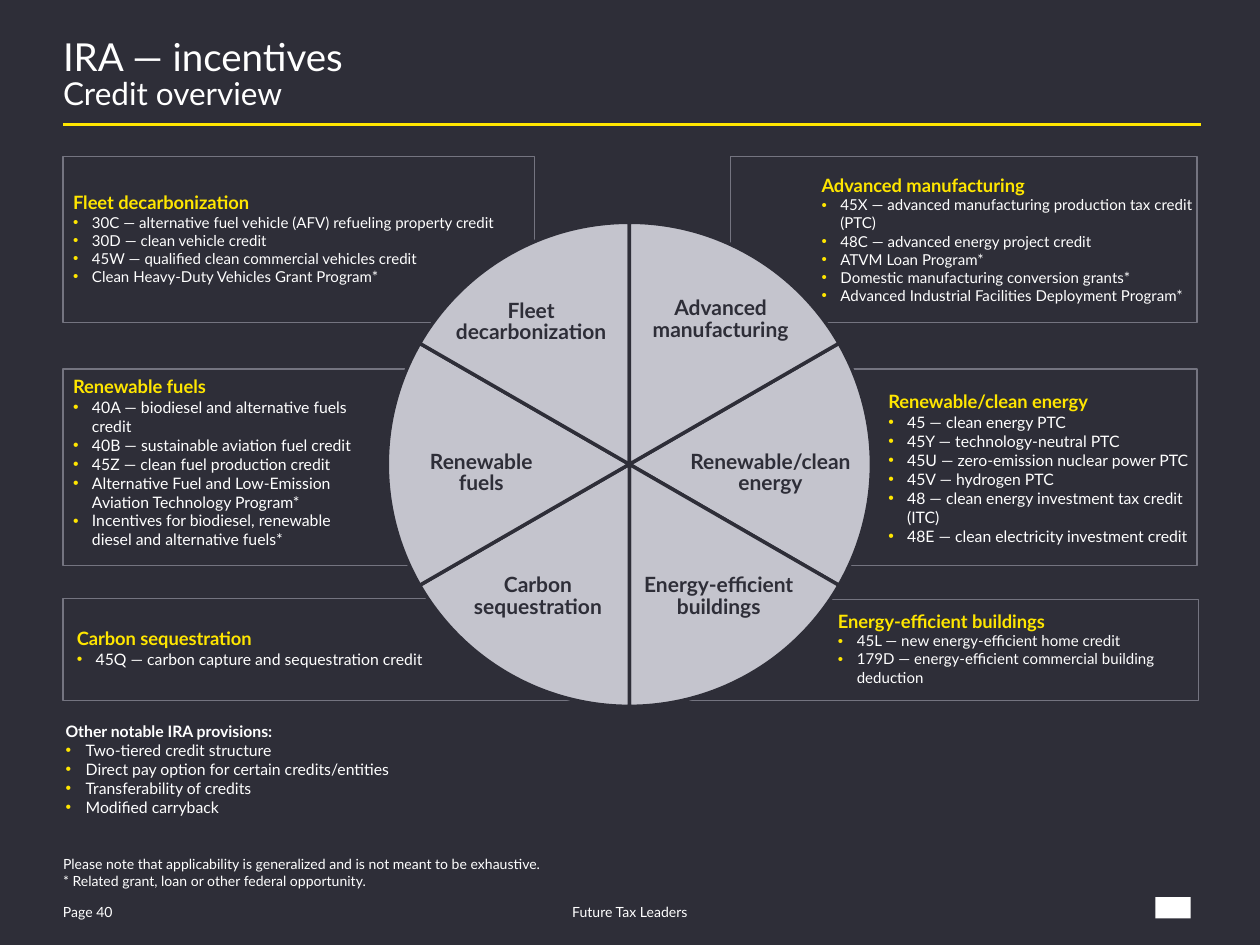
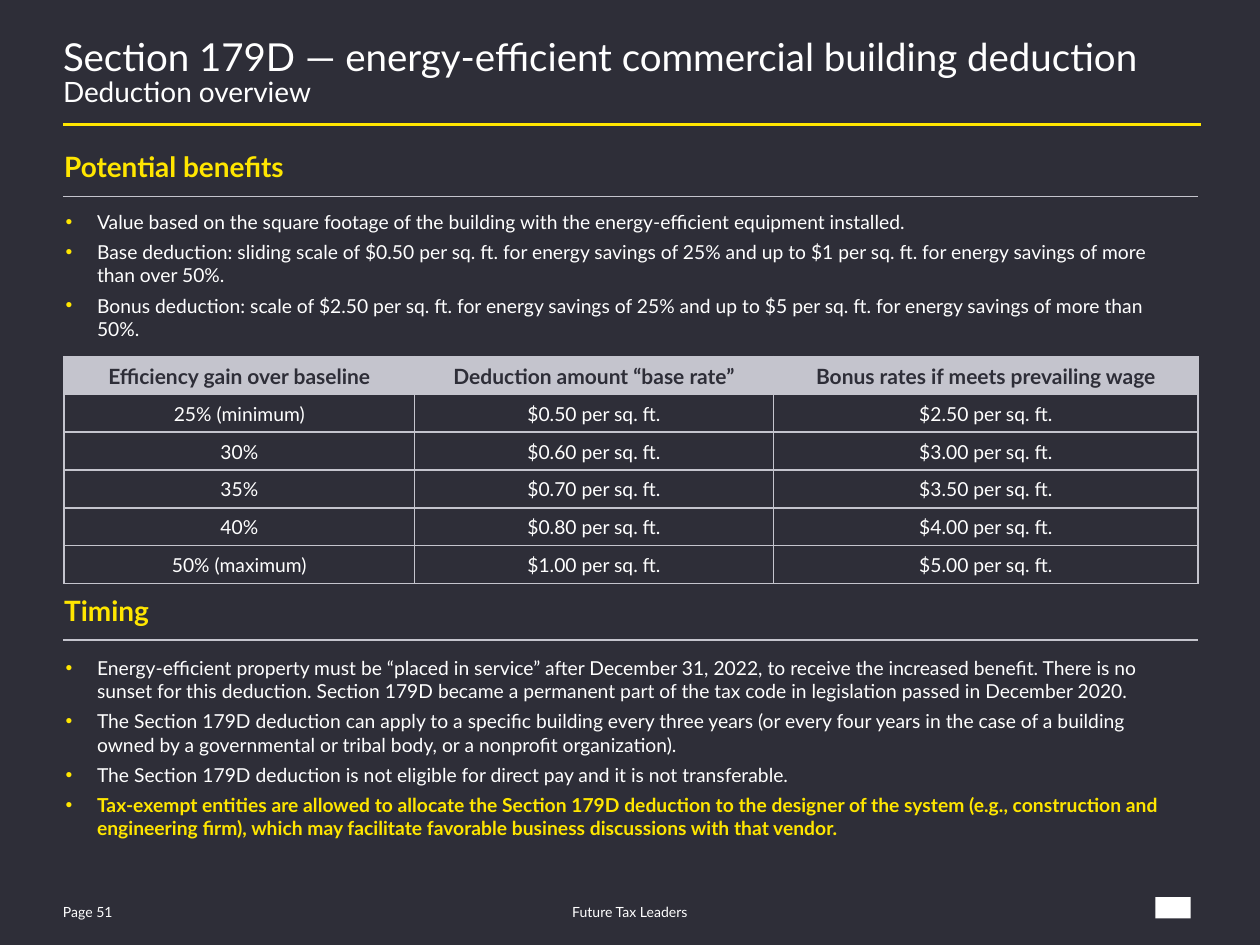
"""Build two tax-incentive slides: a credit wheel and a deduction overview."""
import pptx
import pptx.chart.data
import pptx.dml.color
import pptx.enum.chart
import pptx.enum.shapes
import pptx.enum.text
import pptx.oxml
import pptx.oxml.ns
import pptx.util

Inches, Pt = pptx.util.Inches, pptx.util.Pt
RGBColor = pptx.dml.color.RGBColor
ALIGN = pptx.enum.text.PP_ALIGN
ANCHOR = pptx.enum.text.MSO_ANCHOR
SHAPE = pptx.enum.shapes.MSO_SHAPE
qn = pptx.oxml.ns.qn

DARK = RGBColor(0x2E, 0x2E, 0x38)
YELLOW = RGBColor(0xFF, 0xE6, 0x00)
WHITE = RGBColor(0xFF, 0xFF, 0xFF)
SILVER = RGBColor(0xC4, 0xC4, 0xCD)
GREY = RGBColor(0x74, 0x74, 0x80)
FONT = "Lato"

CARDS = [
    ((0.5, 4.75, 4.08, 0.81), (0.61, 4.98, 2.83, 0.33), "Carbon sequestration", 9,
     ["45Q — carbon capture and sequestration credit"]),
    ((0.5, 1.24, 3.74, 1.32), (0.58, 1.52, 3.52, 0.76), "Fleet decarbonization", 8.6,
     ["30C — alternative fuel vehicle (AFV) refueling property credit",
      "30D — clean vehicle credit",
      "45W — qualified clean commercial vehicles credit",
      "Clean Heavy-Duty Vehicles Grant Program*"]),
    ((5.47, 4.76, 4.04, 0.8), (6.65, 4.84, 2.85, 0.61), "Energy-efficient buildings", 8.6,
     ["45L — new energy-efficient home credit",
      "179D — energy-efficient commercial building deduction"]),
    ((5.8, 1.24, 3.7, 1.32), (6.52, 1.38, 2.99, 1.05), "Advanced manufacturing", 8.6,
     ["45X — advanced manufacturing production tax credit (PTC)",
      "48C — advanced energy project credit",
      "ATVM Loan Program*",
      "Domestic manufacturing conversion grants*",
      "Advanced Industrial Facilities Deployment Program*"]),
    ((0.5, 2.93, 2.85, 1.56), (0.58, 2.98, 2.29, 1.39), "Renewable fuels", 9,
     ["40A — biodiesel and alternative fuels credit",
      "40B — sustainable aviation fuel credit",
      "45Z — clean fuel production credit",
      "Alternative Fuel and Low-Emission Aviation Technology Program*",
      "Incentives for biodiesel, renewable diesel and alternative fuels*"]),
    ((5.34, 2.93, 4.16, 1.56), (7.05, 3.1, 2.46, 1.24), "Renewable/clean energy", 9,
     ["45 — clean energy PTC",
      "45Y — technology-neutral PTC",
      "45U — zero-emission nuclear power PTC",
      "45V — hydrogen PTC",
      "48 — clean energy investment tax credit (ITC)",
      "48E — clean electricity investment credit"]),
]
WHEEL_LABELS = [
    ("Carbon sequestration", 3.69, 4.53, 1.16),
    ("Energy-efficient buildings", 5.04, 4.53, 1.33),
    ("Fleet decarbonization", 3.57, 2.35, 1.29),
    ("Advanced manufacturing", 5.14, 2.33, 1.16),
    ("Renewable fuels", 3.24, 3.55, 1.16),
    ("Renewable/clean energy", 5.34, 3.55, 1.55),
]
PROVISIONS = [
    "Two-tiered credit structure",
    "Direct pay option for certain credits/entities",
    "Transferability of credits",
    "Modified carryback",
]
BENEFITS = [
    "Value based on the square footage of the building with the energy-efficient equipment installed.",
    "Base deduction: sliding scale of $0.50 per sq. ft. for energy savings of 25% and up to $1 per sq. ft. "
    "for energy savings of more than over 50%.",
    "Bonus deduction: scale of $2.50 per sq. ft. for energy savings of 25% and up to $5 per sq. ft. "
    "for energy savings of more than 50%.",
]
TIMING = [
    "Energy-efficient property must be “placed in service” after December 31, 2022, to receive the increased "
    "benefit. There is no sunset for this deduction. Section 179D became a permanent part of the tax code in "
    "legislation passed in December 2020.",
    "The Section 179D deduction can apply to a specific building every three years (or every four years in the "
    "case of a building owned by a governmental or tribal body, or a nonprofit organization).",
    "The Section 179D deduction is not eligible for direct pay and it is not transferable.",
]
TIMING_KEY = (
    "Tax-exempt entities are allowed to allocate the Section 179D deduction to the designer of the system "
    "(e.g., construction and engineering firm), which may facilitate favorable business discussions with "
    "that vendor."
)
RATE_HEADERS = ["Efficiency gain over baseline", "Deduction amount “base rate”",
                "Bonus rates if meets prevailing wage"]
RATES = [("25% (minimum)", 0.5), ("30%", 0.6), ("35%", 0.7), ("40%", 0.8), ("50% (maximum)", 1.0)]
BONUS_FACTOR = 5


def place(sp, box):
    """Move a shape to a box given in inches."""
    sp.left, sp.top, sp.width, sp.height = map(Inches, box)


def prepare(sp, insets=(0, 0, 0, 0), anchor=ANCHOR.TOP):
    """Set wrapping, insets and anchor, and return the text frame."""
    tf = sp.text_frame
    tf.word_wrap = True
    tf.auto_size = pptx.enum.text.MSO_AUTO_SIZE.NONE
    tf.margin_left, tf.margin_top, tf.margin_right, tf.margin_bottom = map(Inches, insets)
    tf.vertical_anchor = anchor
    return tf


def add_run(p, text, size, color=WHITE, bold=False):
    """Add one formatted run to a paragraph."""
    r = p.add_run()
    r.text = text
    r.font.name, r.font.size, r.font.bold = FONT, Pt(size), bold
    r.font.color.rgb = color


def add_paragraph(tf, text, size, color=WHITE, bold=False, indent=0, before=0,
                  align=ALIGN.LEFT, spacing=1.0):
    """Fill the first empty paragraph or add one; an indent brings a bullet."""
    first = not tf.paragraphs[0].runs
    p = tf.paragraphs[0] if first else tf.add_paragraph()
    pPr = p._p.get_or_add_pPr()
    pPr.set("marL", str(Inches(indent)))
    pPr.set("indent", str(-Inches(indent)))
    if indent:
        clr = pptx.oxml.ns.nsdecls("a")
        pPr.append(pptx.oxml.parse_xml(f'<a:buClr {clr}><a:srgbClr val="{YELLOW}"/></a:buClr>'))
        pPr.append(pptx.oxml.parse_xml(f'<a:buFont {clr} typeface="Arial"/>'))
        pPr.append(pptx.oxml.parse_xml(f'<a:buChar {clr} char="•"/>'))
    else:
        pPr.append(pptx.oxml.parse_xml(f'<a:buNone {pptx.oxml.ns.nsdecls("a")}/>'))
    p.alignment, p.line_spacing = align, spacing
    p.space_before = Pt(0 if first else before)
    add_run(p, text, size, color, bold)


def add_text(s, box, text, size, color=WHITE, bold=False, insets=(0, 0, 0, 0),
             anchor=ANCHOR.TOP, **layout):
    """Add a text box with one paragraph."""
    tf = prepare(s.shapes.add_textbox(*map(Inches, box)), insets, anchor)
    add_paragraph(tf, text, size, color, bold, **layout)
    return tf


def add_rule(s, y, right, color, width):
    """Add a horizontal rule from the left margin."""
    line = s.shapes.add_connector(pptx.enum.shapes.MSO_CONNECTOR.STRAIGHT,
                                  Inches(0.5), Inches(y), Inches(right), Inches(y))
    line.line.color.rgb, line.line.width = color, Pt(width)
    line._element.spPr.append(pptx.oxml.parse_xml(f'<a:effectLst {pptx.oxml.ns.nsdecls("a")}/>'))


def add_rect(s, box, fill=None, line=None):
    """Add a plain rectangle."""
    sp = s.shapes.add_shape(SHAPE.RECTANGLE, *map(Inches, box))
    sp.shadow.inherit = False
    if fill is None:
        sp.fill.background()
    else:
        sp.fill.solid()
        sp.fill.fore_color.rgb = fill
    if line is None:
        sp.line.fill.background()
    else:
        sp.line.color.rgb, sp.line.width = line, Pt(0.75)


def add_page(prs, layout, title, subtitle, subtitle_size, number):
    """Add a slide with its title, rule, footer and corner mark."""
    s = prs.slides.add_slide(prs.slide_layouts[layout])
    sp = s.shapes.title
    place(sp, (0.5, 0.32, 9, 0.65))
    tf = prepare(sp)
    add_paragraph(tf, title, 22, spacing=0.85)
    tf.paragraphs[0].add_line_break()
    add_run(tf.paragraphs[0], subtitle, subtitle_size)
    add_rule(s, 0.99, 9.53, YELLOW, 1.5)
    footer_insets = (0, 0.04, 0, 0)
    add_text(s, (0.5, 7.13, 0.73, 0.2), f"Page {number}", 8, insets=footer_insets)
    add_text(s, (3.08, 7.13, 3.84, 0.2), "Future Tax Leaders", 8, insets=footer_insets,
             align=ALIGN.CENTER)
    add_rect(s, (9.17, 7.12, 0.28, 0.17), fill=WHITE)
    return s


def add_wheel(s):
    """Add the pie of six equal slices."""
    data = pptx.chart.data.CategoryChartData()
    data.categories = [str(n) for n in range(1, 7)]
    data.add_series("Series 1", [17] * 6)
    chart = s.shapes.add_chart(pptx.enum.chart.XL_CHART_TYPE.PIE, Inches(2.25), Inches(1.59),
                               Inches(5.49), Inches(4.15), data).chart
    chart.has_legend = chart.has_title = False
    chart.font.name, chart.font.size, chart.font.color.rgb = FONT, Pt(10), DARK
    plot = chart.plots[0]
    plot.vary_by_categories = False
    for i in range(6):
        fmt = plot.series[0].points[i].format
        fmt.fill.solid()
        fmt.fill.fore_color.rgb = SILVER
        fmt.line.color.rgb, fmt.line.width = DARK, Pt(2)
    ns = pptx.oxml.ns.nsdecls("c", "a")
    area = chart.element.find(".//" + qn("c:plotArea"))
    pie = area.find(qn("c:pieChart"))
    for parent, tag in ((area, "c:layout"), (pie, "c:firstSliceAng")):
        for old in parent.findall(qn(tag)):
            parent.remove(old)
    pie.append(pptx.oxml.parse_xml(f'<c:firstSliceAng {ns} val="60"/>'))
    frame = "".join(f'<c:{k} val="{v}"/>' for k, v in (
        ("layoutTarget", "inner"), ("xMode", "edge"), ("yMode", "edge"),
        ("x", 0.15), ("y", 0.04), ("w", 0.7), ("h", 0.93)))
    area.insert(0, pptx.oxml.parse_xml(
        f"<c:layout {ns}><c:manualLayout>{frame}</c:manualLayout></c:layout>"))
    clear = f"<c:spPr {ns}><a:noFill/><a:ln><a:noFill/></a:ln></c:spPr>"
    area.append(pptx.oxml.parse_xml(clear))
    chart.element.find(qn("c:chart")).addnext(pptx.oxml.parse_xml(clear))


def add_card_text(s, box, heading, size, items):
    """Add a yellow heading with its bulleted credits."""
    tf = add_text(s, box, heading, 10.5, YELLOW, True)
    for item in items:
        add_paragraph(tf, item, size, indent=0.15)


def fill_cell(cell, text, size, color, bold, fill):
    """Write and format one bordered table cell."""
    cell.margin_left = cell.margin_top = cell.margin_right = Inches(0.01)
    cell.margin_bottom = 0
    cell.vertical_anchor = ANCHOR.MIDDLE
    add_paragraph(cell.text_frame, text, size, color, bold, align=ALIGN.CENTER)
    cell.fill.solid()
    cell.fill.fore_color.rgb = fill
    for i, side in enumerate("LRTB"):
        cell._tc.get_or_add_tcPr().insert(i, pptx.oxml.parse_xml(
            f'<a:ln{side} {pptx.oxml.ns.nsdecls("a")} w="{Pt(1)}"><a:solidFill>'
            f'<a:srgbClr val="{SILVER}"/></a:solidFill></a:ln{side}>'))


def add_rate_table(s):
    """Add the table of base and bonus rates."""
    rows = [RATE_HEADERS] + [
        [gain, f"${base:.2f} per sq. ft.", f"${base * BONUS_FACTOR:.2f} per sq. ft."]
        for gain, base in RATES]
    table = s.shapes.add_table(len(rows), 3, Inches(0.51), Inches(2.83), Inches(9), Inches(1.8)).table
    for col, width in zip(table.columns, (2.78, 2.85, 3.37)):
        col.width = Inches(width)
    for i, row in enumerate(rows):
        style = (11, WHITE, False, DARK) if i else (12, DARK, True, SILVER)
        for j, text in enumerate(row):
            fill_cell(table.cell(i, j), text, *style)


def add_section(s, idx, heading, top, list_top, list_height, items):
    """Fill a heading and list placeholder pair, with a rule between them."""
    insets = (0.1, 0.05, 0.1, 0.05)
    head, body = s.placeholders[idx], s.placeholders[idx + 1]
    place(head, (0.41, top, 9.09, 0.37))
    add_paragraph(prepare(head, insets), heading, 16, YELLOW, True)
    add_rule(s, top + 0.42, 9.51, SILVER, 0.75)
    place(body, (0.42, list_top, 9.09, list_height))
    tf = prepare(body, insets)
    for item in items:
        add_paragraph(tf, item, 11, indent=0.25, before=4)
    return tf


def build_credits(prs):
    """Build the credit overview slide."""
    s = add_page(prs, 1, "IRA — incentives", "Credit overview", 18, 40)
    for frame, *_ in CARDS:
        add_rect(s, frame, line=GREY)
    add_wheel(s)
    for _, *card in CARDS:
        add_card_text(s, *card)
    for text, x, y, width in WHEEL_LABELS:
        add_text(s, (x, y, width, 0.64), text, 12, DARK, True, insets=(0, 0.04, 0, 0),
                 align=ALIGN.CENTER, spacing=0.85)
    body = s.placeholders[1]
    place(body, (0.52, 5.73, 2.92, 0.93))
    tf = prepare(body)
    add_paragraph(tf, "Other notable IRA provisions:", 9, bold=True)
    for item in PROVISIONS:
        add_paragraph(tf, item, 9, indent=0.16)
    add_text(s, (0.5, 6.78, 4.59, 0.14),
             "Please note that applicability is generalized and is not meant to be exhaustive.", 8,
             insets=(0, 0.03, 0, 0), spacing=0.85)
    add_text(s, (0.5, 6.91, 3.45, 0.16), "* Related grant, loan or other federal opportunity.", 8,
             anchor=ANCHOR.MIDDLE)


def build_deduction(prs):
    """Build the Section 179D slide."""
    s = add_page(prs, 4, "Section 179D — energy-efficient commercial building deduction",
                 "Deduction overview", 16, 51)
    add_section(s, 1, "Potential benefits", 1.14, 1.62, 1.14, BENEFITS)
    add_rate_table(s)
    tf = add_section(s, 3, "Timing", 4.66, 5.16, 1.57, TIMING)
    add_paragraph(tf, TIMING_KEY, 11, YELLOW, True, indent=0.25, before=4)


def main():
    """Create and save the presentation."""
    prs = pptx.Presentation()
    prs.slide_width, prs.slide_height = Inches(10), Inches(7.5)
    fill = prs.slide_master.background.fill
    fill.solid()
    fill.fore_color.rgb = DARK
    build_credits(prs)
    build_deduction(prs)
    prs.save("out.pptx")


if __name__ == "__main__":
    main()
